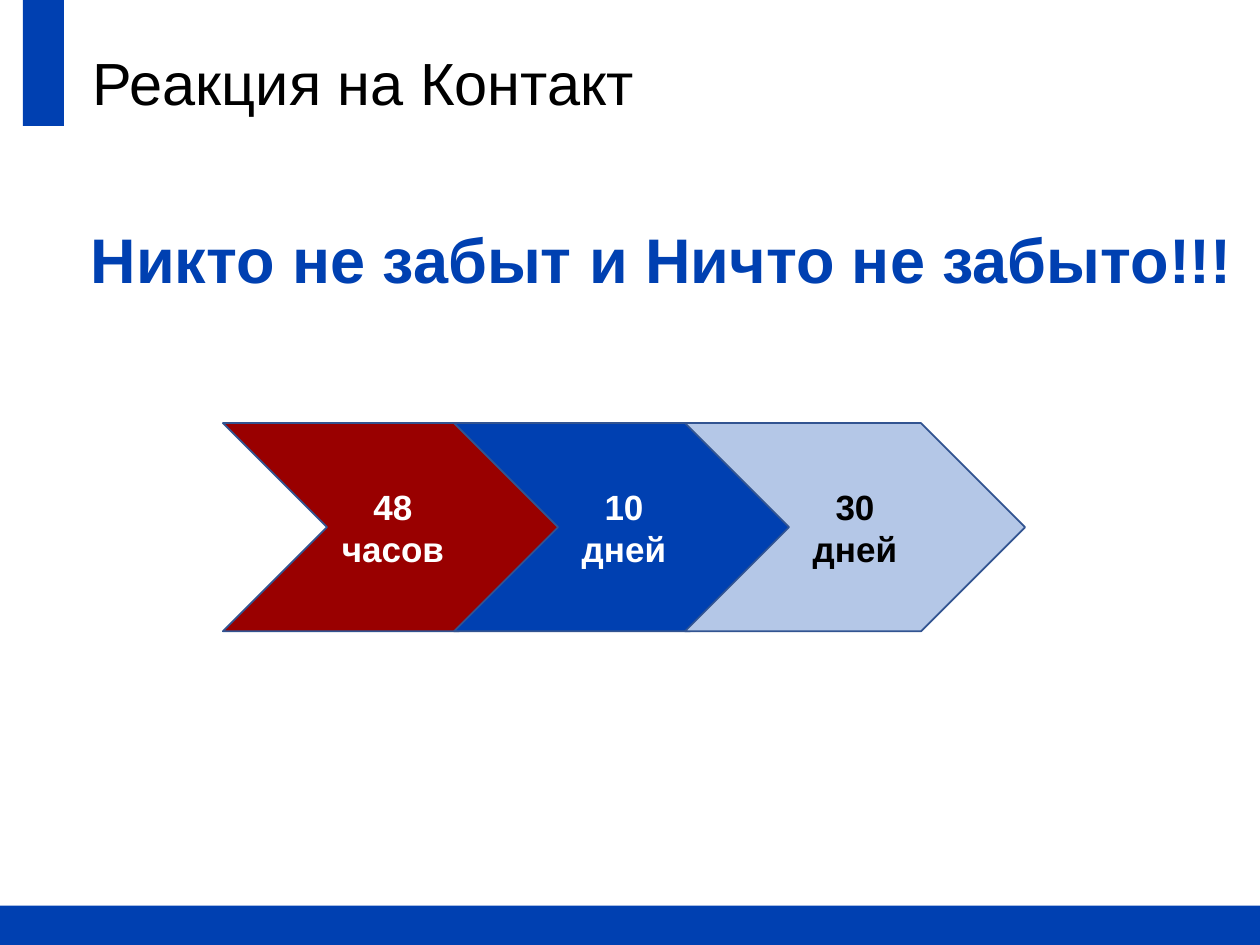
from pptx import Presentation
from pptx.dml.color import RGBColor
from pptx.enum.shapes import MSO_SHAPE
from pptx.enum.text import MSO_ANCHOR, PP_ALIGN
from pptx.util import Pt

RECTANGLE, CHEVRON = MSO_SHAPE.RECTANGLE, MSO_SHAPE.CHEVRON
MIDDLE, TOP = MSO_ANCHOR.MIDDLE, MSO_ANCHOR.TOP
LEFT, CENTER = PP_ALIGN.LEFT, PP_ALIGN.CENTER

BLUE = RGBColor(0x00, 0x40, 0xB1)
RED = RGBColor(0x99, 0x00, 0x00)
PALE_BLUE = RGBColor(0xB4, 0xC7, 0xE7)
OUTLINE = RGBColor(0x32, 0x54, 0x91)
WHITE = RGBColor(0xFF, 0xFF, 0xFF)
BLACK = RGBColor(0x00, 0x00, 0x00)

TITLE = "Реакция на Контакт"
SLOGAN = "Никто не забыт и Ничто не забыто!!!"
DEADLINES = [
    ("48 часов", RED, WHITE),
    ("10 дней", BLUE, WHITE),
    ("30 дней", PALE_BLUE, BLACK),
]
BARS = [(0, 517.5, 720, 22.5), (13, 0, 23.5, 72)]

CHEVRON_LEFT, CHEVRON_TOP = 127.4, 241.8
CHEVRON_WIDTH, CHEVRON_HEIGHT = 194.4, 119
CHEVRON_STEP = 132


def write(shape, text, size, color, bold, align, anchor, wrap=True):
    frame = shape.text_frame
    frame.word_wrap = wrap
    frame.vertical_anchor = anchor
    paragraph = frame.paragraphs[0]
    paragraph.text = text
    paragraph.alignment = align
    font = paragraph.font
    font.name, font.size, font.bold = "Arial", Pt(size), bold
    font.color.rgb = color


def add_filled(slide, preset, box, fill):
    shape = slide.shapes.add_shape(preset, *map(Pt, box))
    shape.shadow.inherit = False
    shape.fill.solid()
    shape.fill.fore_color.rgb = fill
    shape.line.fill.background()
    return shape


def main():
    deck = Presentation()
    deck.slide_width, deck.slide_height = Pt(720), Pt(540)
    slide = deck.slides.add_slide(deck.slide_layouts[6])

    for box in BARS:
        add_filled(slide, RECTANGLE, box, BLUE)

    title = slide.shapes.add_textbox(Pt(46), Pt(21.6), Pt(621), Pt(50))
    write(title, TITLE, 34, BLACK, False, LEFT, MIDDLE)

    for index, (term, fill, color) in enumerate(DEADLINES):
        left = CHEVRON_LEFT + index * CHEVRON_STEP
        box = (left, CHEVRON_TOP, CHEVRON_WIDTH, CHEVRON_HEIGHT)
        deadline = add_filled(slide, CHEVRON, box, fill)
        deadline.line.color.rgb = OUTLINE
        deadline.line.width = Pt(1)
        write(deadline, term, 20, color, True, CENTER, MIDDLE)

    slogan = slide.shapes.add_textbox(Pt(44.8), Pt(122.4), Pt(673), Pt(51))
    write(slogan, SLOGAN, 36, BLUE, True, LEFT, TOP, wrap=False)

    deck.save("out.pptx")


if __name__ == "__main__":
    main()
